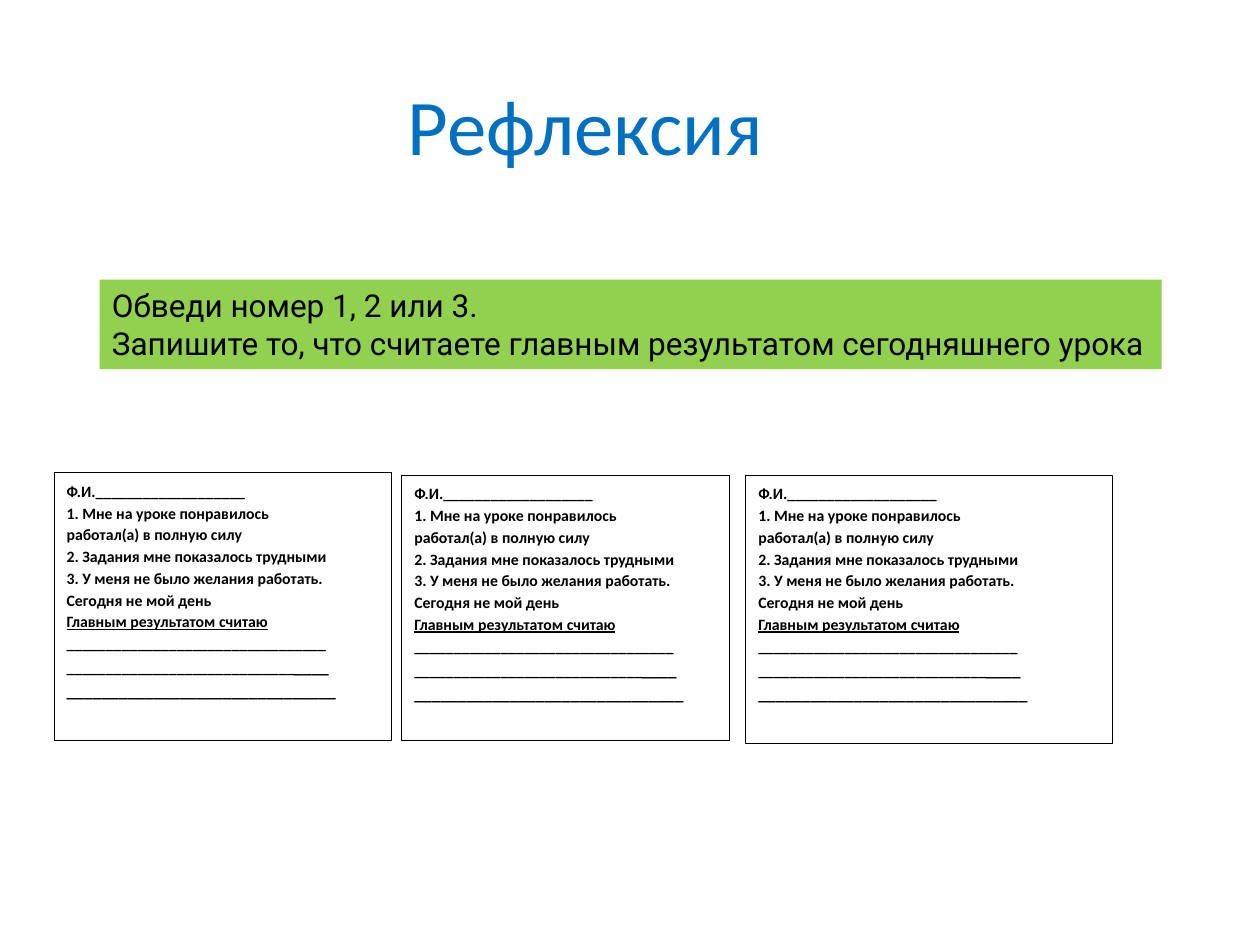
"""Build a lesson reflection slide with three answer cards."""
from dataclasses import dataclass

from pptx import Presentation
from pptx.dml.color import RGBColor
from pptx.enum.shapes import MSO_SHAPE
from pptx.enum.text import MSO_ANCHOR, PP_ALIGN
from pptx.util import Inches, Pt


@dataclass(frozen=True)
class Theme:
    black: RGBColor = RGBColor(0, 0, 0)
    white: RGBColor = RGBColor(255, 255, 255)
    green: RGBColor = RGBColor(0x92, 0xD0, 0x50)
    blue: RGBColor = RGBColor(0x00, 0x70, 0xC0)
    body_font: str = "Calibri"
    task_font: str = "Roboto"
    title_size: float = 45
    task_size: float = 18
    card_size: float = 9
    rule_size: float = 10
    card_line: float = 0.5
    card_spacing: float = 1.15


@dataclass(frozen=True)
class Box:
    left: float
    top: float
    width: float
    height: float

    def emu(self) -> tuple:
        return tuple(Inches(v) for v in (self.left, self.top, self.width, self.height))


@dataclass(frozen=True)
class Span:
    text: str
    size: float
    font: str = "Calibri"
    color: RGBColor = RGBColor(0, 0, 0)
    bold: bool = False
    underline: bool = False


THEME = Theme()


def card_span(text: str, size: float = THEME.card_size, underline: bool = False) -> Span:
    return Span(text, size, THEME.body_font, THEME.black, True, underline)


TITLE_BOX = Box(1.77, 0.56, 5.75, 0.86)
TASK_BOX = Box(0.79, 2.22, 8.43, 0.71)
CARDS = (
    Box(0.43, 3.75, 2.68, 2.13),
    Box(3.19, 3.77, 2.6, 2.11),
    Box(5.92, 3.77, 2.91, 2.13),
)
TITLE = [[Span("Рефлексия", THEME.title_size, THEME.body_font, THEME.blue)]]
TASK = [
    [Span(line, THEME.task_size, THEME.task_font, THEME.black)]
    for line in (
        "Обведи номер 1, 2 или 3.",
        "Запишите то, что считаете главным результатом сегодняшнего урока",
    )
]
CARD_TEXT = [
    [card_span(line)]
    for line in (
        "Ф.И." + "_" * 19,
        "1. Мне на уроке понравилось",
        "работал(а) в полную силу",
        "2. Задания мне показалось трудными",
        "3. У меня не было желания работать.",
        "Сегодня не мой день",
    )
] + [
    [card_span("Главным результатом считаю ", underline=True), card_span("_" * 33)],
    [card_span("_" * 29), card_span("_" * 4, THEME.rule_size)],
    [card_span("_" * 31, THEME.rule_size)],
]


def write(tf, lines: list, align=PP_ALIGN.LEFT, spacing: float = 1.0) -> None:
    tf.word_wrap = True
    tf.vertical_anchor = MSO_ANCHOR.TOP
    for i, spans in enumerate(lines):
        p = tf.add_paragraph() if i else tf.paragraphs[0]
        p.alignment = align
        p.line_spacing = spacing
        for span in spans:
            r = p.add_run()
            r.text = span.text
            r.font.name = span.font
            r.font.size = Pt(span.size)
            r.font.color.rgb = span.color
            r.font.bold = span.bold
            r.font.underline = span.underline


def add_panel(s, box: Box, fill: RGBColor, outlined: bool = False):
    sp = s.shapes.add_shape(MSO_SHAPE.RECTANGLE, *box.emu())
    sp.shadow.inherit = False
    sp.fill.solid()
    sp.fill.fore_color.rgb = fill
    if outlined:
        sp.line.color.rgb = THEME.black
        sp.line.width = Pt(THEME.card_line)
    else:
        sp.line.fill.background()
    return sp


def main() -> None:
    prs = Presentation()
    prs.slide_width, prs.slide_height = Inches(10), Inches(7.5)
    s = prs.slides.add_slide(prs.slide_layouts[6])
    for box in CARDS:
        sp = add_panel(s, box, THEME.white, outlined=True)
        write(sp.text_frame, CARD_TEXT, spacing=THEME.card_spacing)
    write(add_panel(s, TASK_BOX, THEME.green).text_frame, TASK)
    title = s.shapes.add_textbox(*TITLE_BOX.emu())
    write(title.text_frame, TITLE, PP_ALIGN.CENTER)
    prs.save("out.pptx")


if __name__ == "__main__":
    main()
